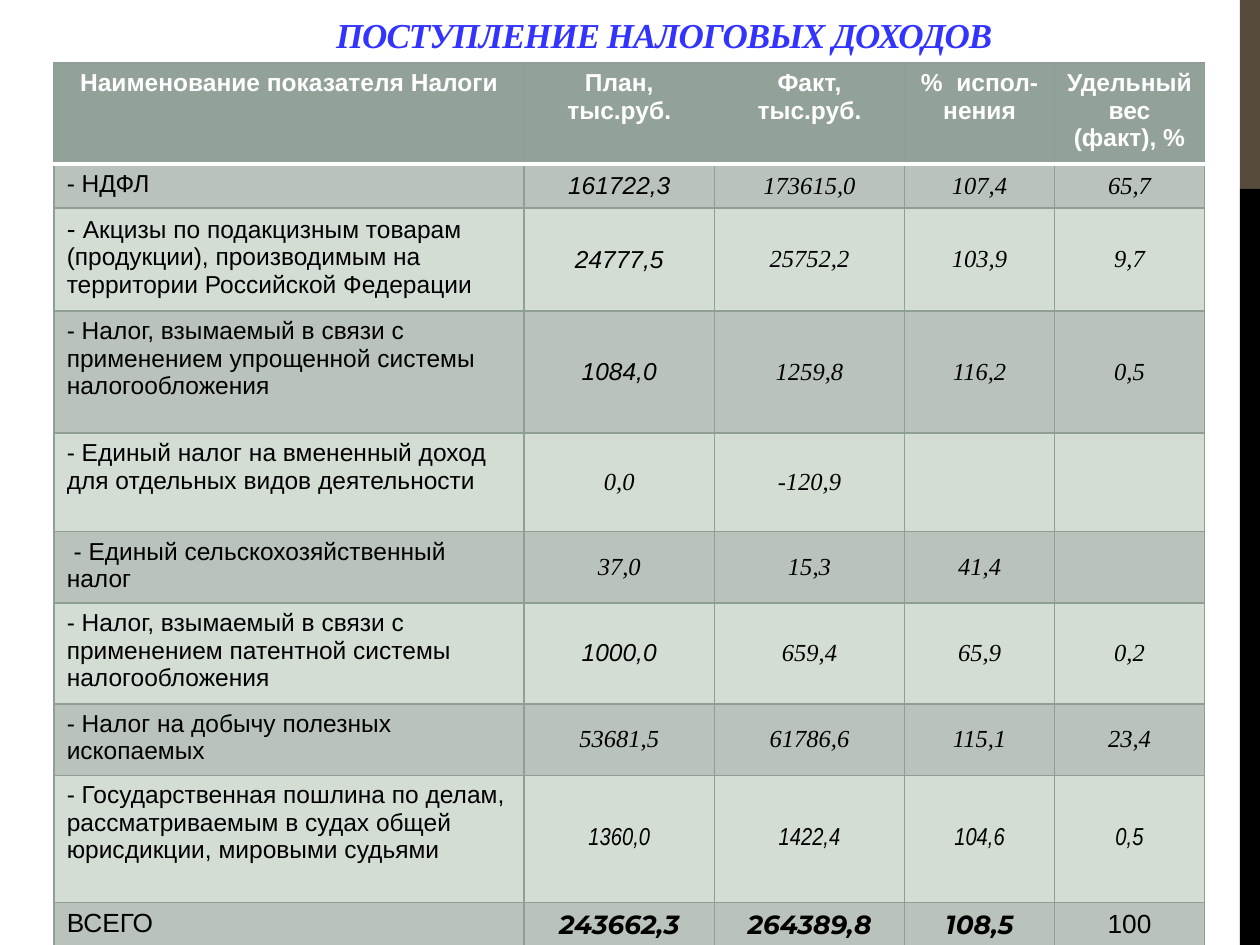
from lxml import etree
from pptx import Presentation
from pptx.dml.color import RGBColor
from pptx.enum.shapes import MSO_SHAPE
from pptx.enum.text import MSO_ANCHOR, PP_ALIGN
from pptx.oxml.ns import qn
from pptx.util import Inches, Pt

RECT = MSO_SHAPE.RECTANGLE
CENTER, LEFT = PP_ALIGN.CENTER, PP_ALIGN.LEFT
TOP, MIDDLE = MSO_ANCHOR.TOP, MSO_ANCHOR.MIDDLE
SERIF, NARROW = "Times New Roman", "Arial Narrow"
HEADER, DARK, LIGHT, BORDER = "93A299", "B9C3BB", "D3DDD4", "8F9F96"


def write(p, text, color, align=CENTER, **fmt):
    p.alignment = align
    r = p.add_run()
    r.text = text
    r.font.color.rgb = RGBColor.from_string(color)
    for name, value in fmt.items():
        setattr(r.font, name, value)
    return r


def set_border(cell, side, color, width):
    ln = etree.SubElement(cell._tc.get_or_add_tcPr(), qn("a:" + side), w=str(Pt(width)))
    fill = etree.SubElement(ln, qn("a:solidFill"))
    etree.SubElement(fill, qn("a:srgbClr"), val=color)


prs = Presentation()
prs.slide_width, prs.slide_height = Inches(10), Inches(7.5)
s = prs.slides.add_slide(prs.slide_layouts[6])

for top, height, color in [(0, 1.5, "564B3C"), (1.5, 6, "000000")]:
    sp = s.shapes.add_shape(RECT, Inches(9.84), Inches(top), Inches(0.16), Inches(height))
    sp.shadow.inherit = False
    sp.fill.solid()
    sp.fill.fore_color.rgb = RGBColor.from_string(color)
    sp.line.fill.background()

title = s.shapes.add_textbox(Inches(1.61), Inches(0), Inches(7.32), Inches(0.55))
tf = title.text_frame
tf.word_wrap = True
tf.vertical_anchor = MIDDLE
r = write(tf.paragraphs[0], "ПОСТУПЛЕНИЕ НАЛОГОВЫХ ДОХОДОВ", "3333FF",
          name=SERIF, size=Pt(20), bold=True, italic=True)
r._r.get_or_add_rPr().set("spc", "-60")

headers = ["Наименование показателя Налоги", "План,\nтыс.руб.", "Факт,\nтыс.руб.",
           "%  испол-нения", "Удельный вес (факт), %"]
rows = [
    (0.35, "Arial", SERIF, ["- НДФЛ", "161722,3", "173615,0", "107,4", "65,7"]),
    (0.79, "Arial", SERIF, ["- Акцизы по подакцизным товарам (продукции), производимым на территории "
                            "Российской Федерации", "24777,5", "25752,2", "103,9", "9,7"]),
    (0.97, "Arial", SERIF, ["- Налог, взымаемый в связи с применением упрощенной системы налогообложения",
                            "1084,0", "1259,8", "116,2", "0,5"]),
    (0.78, SERIF, SERIF, ["- Единый налог на вмененный доход для отдельных видов деятельности",
                          "0,0", "-120,9", "", ""]),
    (0.55, SERIF, SERIF, [" - Единый сельскохозяйственный налог", "37,0", "15,3", "41,4", ""]),
    (0.78, "Arial", SERIF, ["- Налог, взымаемый в связи с применением патентной системы налогообложения",
                            "1000,0", "659,4", "65,9", "0,2"]),
    (0.55, SERIF, SERIF, ["- Налог на добычу полезных ископаемых", "53681,5", "61786,6", "115,1", "23,4"]),
    (1.01, NARROW, NARROW, ["- Государственная пошлина по делам, рассматриваемым в судах общей "
                            "юрисдикции, мировыми судьями", "1360,0", "1422,4", "104,6", "0,5"]),
    (0.35, "Montserrat", "Montserrat", ["ВСЕГО", "243662,3", "264389,8", "108,5", "100"]),
]
table_rows = [(0.75, "Arial", "Arial", headers)] + rows
widths = [3.73, 1.51, 1.51, 1.19, 1.19]
last = len(rows)

frame = s.shapes.add_table(len(table_rows), len(widths), Inches(0.43), Inches(0.5),
                           Inches(sum(widths)), Inches(sum(row[0] for row in table_rows)))
table = frame.table
for column, width in zip(table.columns, widths):
    column.width = Inches(width)

for i, (height, plan_font, fact_font, texts) in enumerate(table_rows):
    table.rows[i].height = Inches(height)
    for j, text in enumerate(texts):
        cell = table.cell(i, j)
        for side in ("lnL", "lnR", "lnT", "lnB"):
            under_header = (i, side) in ((0, "lnB"), (1, "lnT"))
            set_border(cell, side, *(("FFFFFF", 2.25) if under_header else (BORDER, 1)))
        cell.fill.solid()
        color = HEADER if i == 0 else DARK if i % 2 else LIGHT
        cell.fill.fore_color.rgb = RGBColor.from_string(color)
        cell.vertical_anchor = TOP if i == 0 or j == 0 else MIDDLE

        label = j == 0 or (i == last and j == 4)
        fmt = {
            "name": "Arial" if label else plan_font if j == 1 else fact_font,
            "size": Pt(15 if i == last else 14),
            "bold": i == 0 or (i == last and not label),
            "italic": i > 0 and not label,
        }
        if i == last:
            fmt["italic"] = not label
        align = LEFT if i > 0 and j == 0 else CENTER
        tf = cell.text_frame
        for n, line in enumerate(text.split("\n") if text else []):
            p = tf.add_paragraph() if n else tf.paragraphs[0]
            if (i, j) == (2, 0):
                write(p, line[:2], "000000", align, **{**fmt, "size": Pt(15)})
                line = line[2:]
            write(p, line, "000000" if i else "FFFFFF", align, **fmt)

prs.save("out.pptx")
